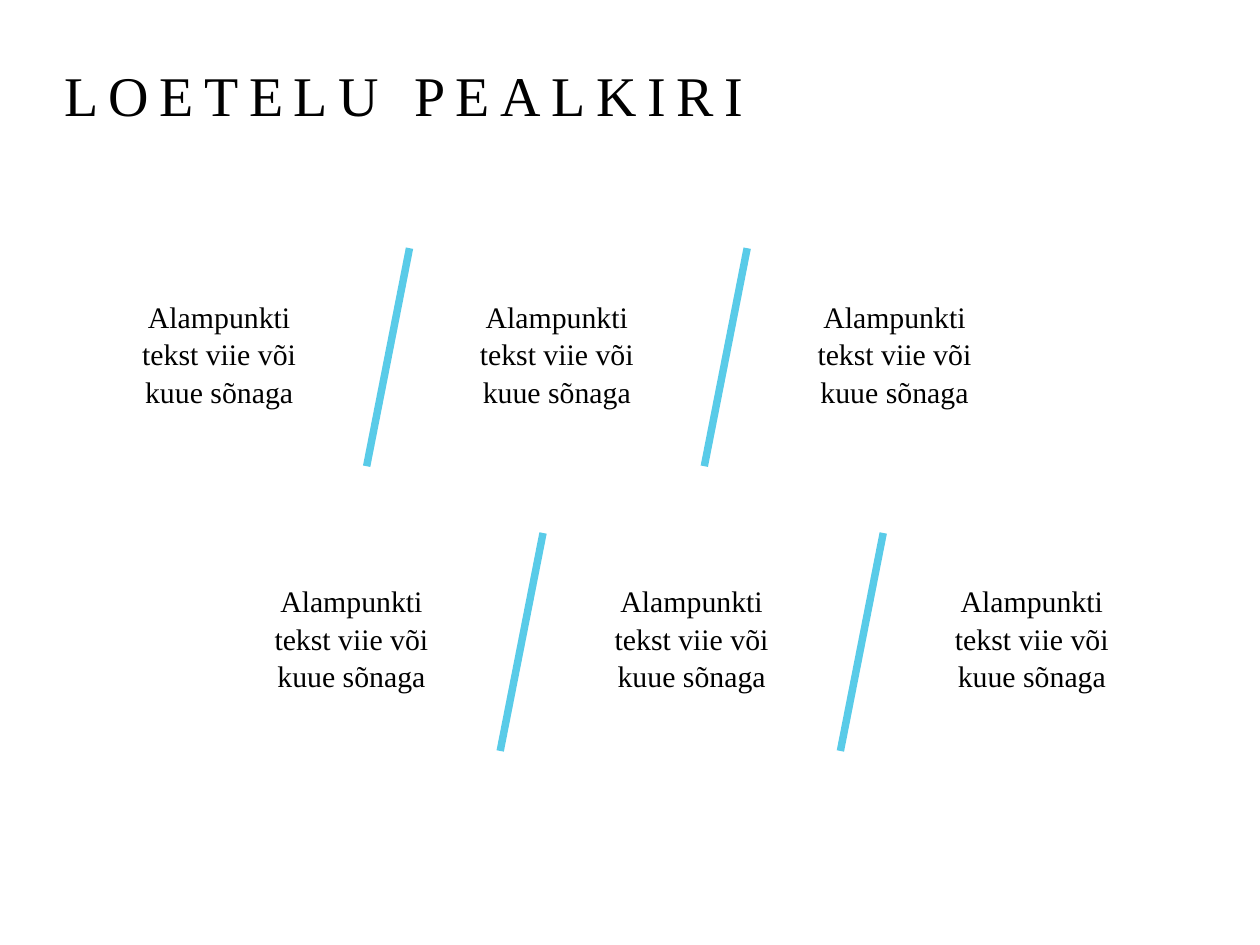
from lxml.etree import SubElement
from pptx import Presentation
from pptx.dml.color import RGBColor
from pptx.enum.shapes import MSO_CONNECTOR
from pptx.enum.text import MSO_ANCHOR, PP_ALIGN
from pptx.oxml.ns import qn
from pptx.util import Inches, Pt

FONT = "Times New Roman"
BLACK = "000000"
SKY_BLUE = "59CBE8"
ITEM_LINES = ["Alampunkti", "tekst viie või", "kuue sõnaga"]
COLUMNS = 3
ITEM_WIDTH, ITEM_HEIGHT = 1.64, 0.96
ITEM_DROP = 0.35
SLASH_LEAN = 0.34


def color(value):
    """Turn a hex string into a colour."""
    return RGBColor.from_string(value)


def add_text(slide, box, lines, size, align=PP_ALIGN.LEFT,
             anchor=MSO_ANCHOR.MIDDLE, line_spacing=1.0, tracking=0):
    """Add a text box with one paragraph for each line."""
    shape = slide.shapes.add_textbox(*map(Inches, box))
    frame = shape.text_frame
    frame.word_wrap = True
    frame.vertical_anchor = anchor
    for index, line in enumerate(lines):
        paragraph = frame.paragraphs[0] if index == 0 else frame.add_paragraph()
        paragraph.alignment = align
        paragraph.line_spacing = line_spacing
        run = paragraph.add_run()
        run.text = line
        run.font.name = FONT
        run.font.size = Pt(size)
        run.font.color.rgb = color(BLACK)
        if tracking:
            run.font._element.set("spc", str(tracking * 100))


def add_slash(slide, center, top, height):
    """Draw a leaning divider around a horizontal centre."""
    half = SLASH_LEAN / 2
    ends = (center + half, top, center - half, top + height)
    connector = slide.shapes.add_connector(MSO_CONNECTOR.STRAIGHT, *map(Inches, ends))
    connector.line.color.rgb = color(SKY_BLUE)
    connector.line.width = Pt(4.25)
    SubElement(connector._element.spPr, qn("a:effectLst"))


def add_title(slide, box):
    """Place the widely spaced heading at the foot of its box."""
    add_text(slide, box, ["LOETELU PEALKIRI"], 32,
             anchor=MSO_ANCHOR.BOTTOM, tracking=6)


def add_item_row(slide, box):
    """Spread the items over the box with a slash in each gap."""
    left, top, width, height = box
    pitch = (width - ITEM_WIDTH) / (COLUMNS - 1)
    for column in range(COLUMNS):
        item_left = left + column * pitch
        item_box = (item_left, top + ITEM_DROP, ITEM_WIDTH, ITEM_HEIGHT)
        add_text(slide, item_box, ITEM_LINES, 17,
                 align=PP_ALIGN.CENTER, line_spacing=1.05)
        if column < COLUMNS - 1:
            add_slash(slide, item_left + (ITEM_WIDTH + pitch) / 2, top, height)


def main():
    """Build and save the slide."""
    presentation = Presentation()
    presentation.slide_width = Inches(10)
    presentation.slide_height = Inches(7.5)
    slide = presentation.slides.add_slide(presentation.slide_layouts[6])
    add_title(slide, (0.41, -0.18, 9.15, 1.24))
    add_item_row(slide, (0.92, 1.97, 7, 1.73))
    add_item_row(slide, (1.97, 4.23, 7.04, 1.73))
    presentation.save("out.pptx")


if __name__ == "__main__":
    main()
